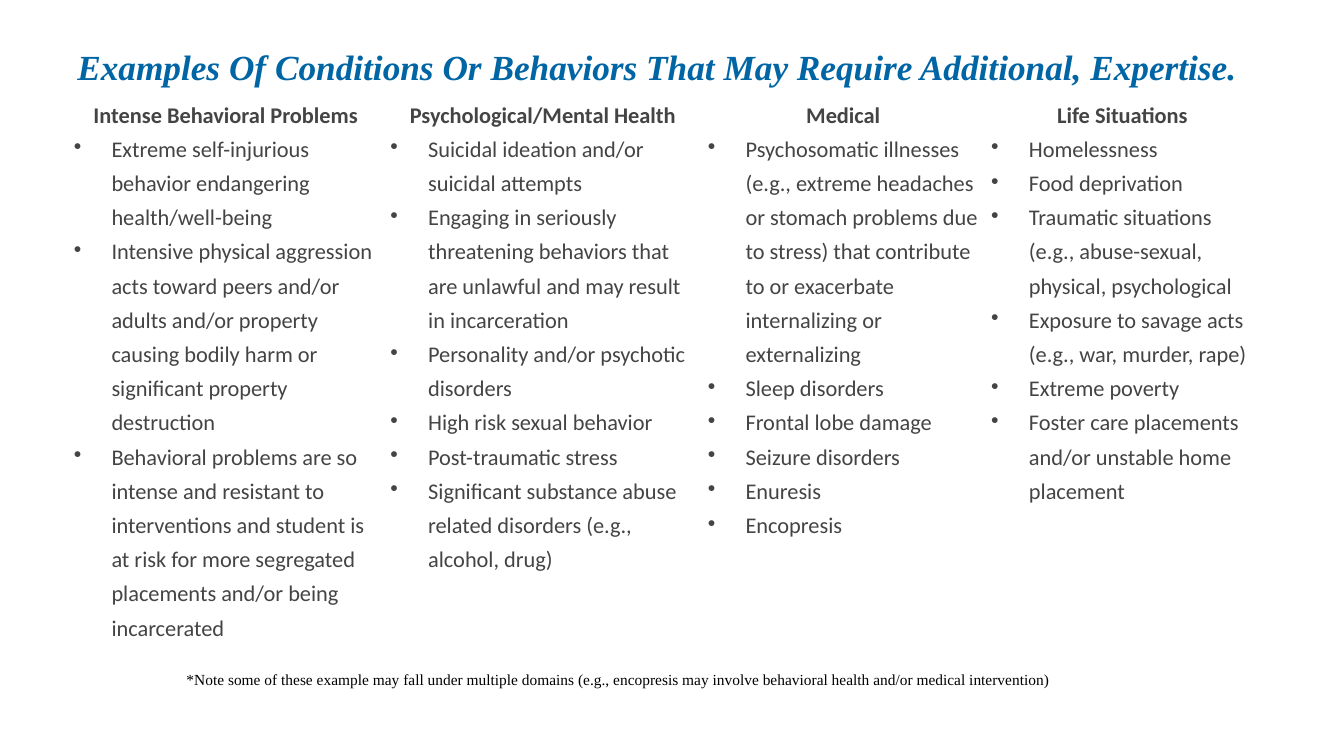
from lxml import etree
from pptx import Presentation
from pptx import util as u
from pptx.dml.color import RGBColor
from pptx.enum import text
from pptx.oxml import ns

TITLE = "Examples Of Conditions Or Behaviors That May Require Additional, Expertise."
NOTE = ("*Note some of these example may fall under multiple domains "
        "(e.g., encopresis may involve behavioral health and/or medical intervention)")
DOMAINS = [
    ("Intense Behavioral Problems", 7.98, [
        "Extreme self-injurious behavior endangering health/well-being",
        "Intensive physical aggression acts toward peers and/or adults and/or property "
        "causing bodily harm or significant property destruction",
        "Behavioral problems are so intense and resistant to interventions and student "
        "is at risk for more segregated placements and/or being incarcerated",
    ]),
    ("Psychological/Mental Health", 8.0, [
        "Suicidal ideation and/or suicidal attempts",
        "Engaging in seriously threatening behaviors that are unlawful and may result "
        "in incarceration",
        "Personality and/or psychotic disorders",
        "High risk sexual behavior",
        "Post-traumatic stress",
        "Significant substance abuse related disorders (e.g., alcohol, drug)",
    ]),
    ("Medical", 7.14, [
        "Psychosomatic illnesses (e.g., extreme headaches or stomach problems due to "
        "stress) that contribute to or exacerbate internalizing or externalizing",
        "Sleep disorders",
        "Frontal lobe damage",
        "Seizure disorders",
        "Enuresis",
        "Encopresis",
    ]),
    ("Life Situations", 6.93, [
        "Homelessness",
        "Food deprivation",
        "Traumatic situations (e.g., abuse-sexual, physical, psychological",
        "Exposure to savage acts (e.g., war, murder, rape)",
        "Extreme poverty",
        "Foster care placements and/or unstable home placement",
    ]),
]
COLORS = {"title": "0065A4", "body": "444444", "note": "000000", "paper": "FFFFFF"}
LEFT, TABLE_TOP = 1.7, 2.39
ROW_HEIGHTS = (0.86, 14.1)
INDENT, INSET = 0.95, 0.16
LINE_SPACING = 1.25
SERIF, SANS = "Times New Roman", "Calibri"


def write(frame, lines, font, size, color, align, bold=False, italic=False):
    frame.text = "\n".join(lines)
    for paragraph in frame.paragraphs:
        paragraph.alignment = align
        paragraph.line_spacing = LINE_SPACING
        for run in paragraph.runs:
            run.font.name = font
            run.font.size = u.Pt(size)
            run.font.bold = bold
            run.font.italic = italic
            run.font.color.rgb = RGBColor.from_string(COLORS[color])


def add_bullets(frame):
    for paragraph in frame.paragraphs:
        properties = paragraph._p.get_or_add_pPr()
        properties.set("marL", str(u.Cm(INDENT)))
        properties.set("indent", str(-u.Cm(INDENT)))
        etree.SubElement(properties, ns.qn("a:buChar"), char="•")


def add_line(slide, box, line, *style, **emphasis):
    frame = slide.shapes.add_textbox(*map(u.Cm, box)).text_frame
    frame.word_wrap = True
    write(frame, [line], *style, **emphasis)


def add_domains(slide):
    widths = [width for _, width, _ in DOMAINS]
    table = slide.shapes.add_table(
        2, len(DOMAINS), u.Cm(LEFT), u.Cm(TABLE_TOP),
        u.Cm(sum(widths)), u.Cm(sum(ROW_HEIGHTS))).table
    table.horz_banding = False
    for row, height in zip(table.rows, ROW_HEIGHTS):
        row.height = u.Cm(height)
    for index, (heading, width, examples) in enumerate(DOMAINS):
        table.columns[index].width = u.Cm(width)
        head, body = table.cell(0, index), table.cell(1, index)
        for cell in (head, body):
            cell.margin_left = cell.margin_right = u.Cm(INSET)
            cell.margin_top = cell.margin_bottom = 0
            cell.fill.solid()
            cell.fill.fore_color.rgb = RGBColor.from_string(COLORS["paper"])
        write(head.text_frame, [heading], SANS, 16, "body",
              text.PP_ALIGN.CENTER, bold=True)
        write(body.text_frame, examples, SANS, 16, "body", text.PP_ALIGN.LEFT)
        add_bullets(body.text_frame)


def main():
    deck = Presentation()
    deck.slide_width, deck.slide_height = u.Cm(33.87), u.Cm(19.05)
    slide = deck.slides.add_slide(deck.slide_layouts[6])
    add_domains(slide)
    add_line(slide, (LEFT, 0.76, 30.48, 2.84), TITLE, SERIF, 25.2, "title",
             text.PP_ALIGN.LEFT, bold=True, italic=True)
    add_line(slide, (4.45, 16.64, 22.63, 1.42), NOTE, SERIF, 11, "note",
             text.PP_ALIGN.JUSTIFY)
    deck.save("out.pptx")


if __name__ == "__main__":
    main()
